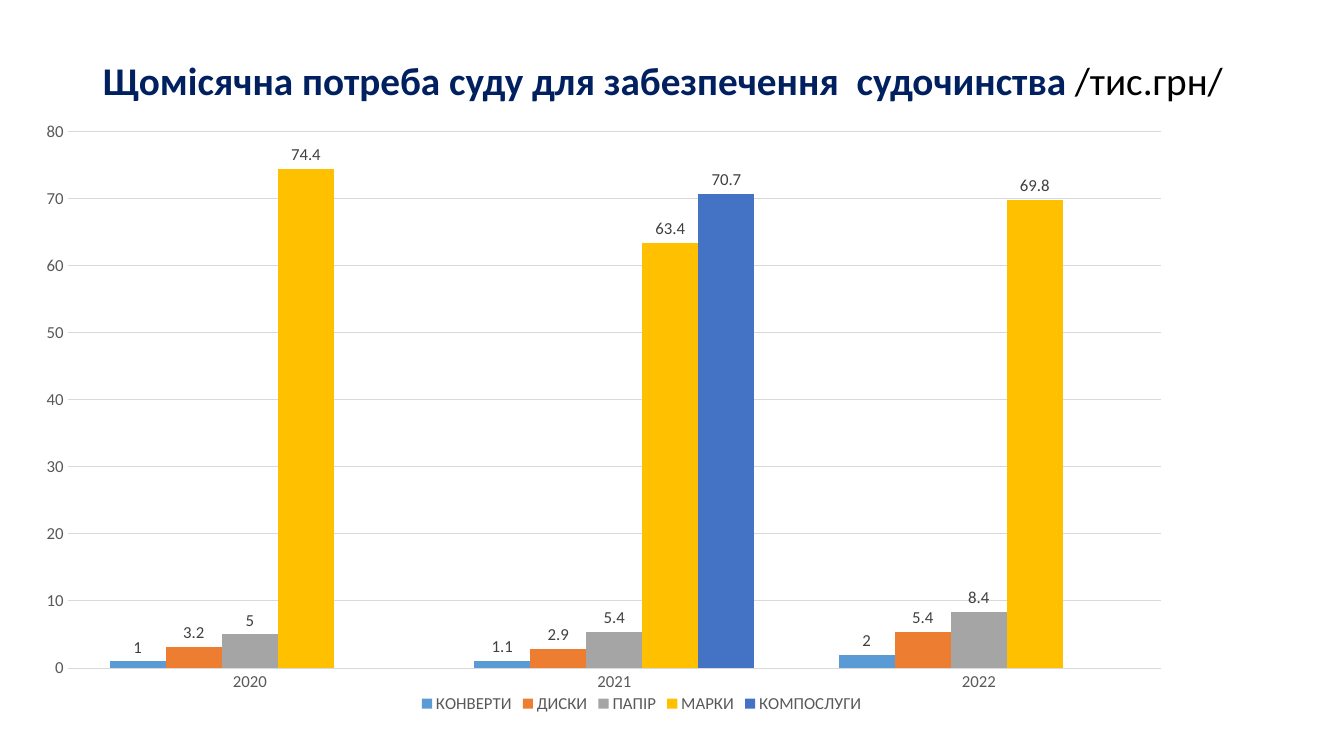
from lxml import etree
from pptx import Presentation
from pptx.chart.data import CategoryChartData as Data
from pptx.dml.color import RGBColor as RGB
from pptx.enum.chart import XL_CHART_TYPE as Kind, XL_LABEL_POSITION as Spot
from pptx.enum.chart import XL_LEGEND_POSITION as Side, XL_TICK_MARK as Tick
from pptx.enum.text import MSO_ANCHOR as Anchor, PP_ALIGN as Align
from pptx.oxml.ns import qn
from pptx.util import Inches, Pt

FONT = "Calibri"
COLORS = {
    "navy": "002060", "black": "000000", "axis": "595959",
    "label": "404040", "grid": "D9D9D9",
}
YEARS = ["2020", "2021", "2022"]
NEEDS = [
    ("КОНВЕРТИ", "5B9BD5", (1, 1.1, 2)),
    ("ДИСКИ", "ED7D31", (3.2, 2.9, 5.4)),
    ("ПАПІР", "A5A5A5", (5, 5.4, 8.4)),
    ("МАРКИ", "FFC000", (74.4, 63.4, 69.8)),
    ("КОМПОСЛУГИ", "4472C4", (None, 70.7, None)),
]
TITLE = [
    ("Щомісячна потреба суду для забезпечення  судочинства ", "navy", True),
    ("/тис.грн/", "black", False),
]


def put(item, **values):
    for name, value in values.items():
        setattr(item, name, value)


def style(font, size, color, bold=False):
    put(font, name=FONT, size=Pt(size), bold=bold)
    font.color.rgb = RGB.from_string(COLORS[color])


def add_title(slide):
    title = slide.shapes.title
    put(title, left=Inches(0.92), top=Inches(0.4),
        width=Inches(11.5), height=Inches(0.84))
    put(title.text_frame, vertical_anchor=Anchor.MIDDLE, word_wrap=True)
    para = title.text_frame.paragraphs[0]
    put(para, alignment=Align.LEFT, line_spacing=0.9)
    for text, color, bold in TITLE:
        run = para.add_run()
        run.text = text
        style(run.font, 28, color, bold)


def set_plot(chart, **box):
    """Fix the inner plot area as shares of the chart."""
    area = chart._chartSpace.chart.plotArea
    for old in area.findall(qn("c:layout")):
        area.remove(old)
    layout = etree.Element(qn("c:layout"))
    area.insert(0, layout)
    manual = etree.SubElement(layout, qn("c:manualLayout"))
    rules = {"layoutTarget": "inner", "xMode": "edge", "yMode": "edge", **box}
    for tag, value in rules.items():
        etree.SubElement(manual, qn("c:" + tag)).set("val", str(value))


def set_axis(axis):
    put(axis, major_tick_mark=Tick.NONE, minor_tick_mark=Tick.NONE)
    style(axis.tick_labels.font, 12, "axis")
    axis.format.line.fill.background()


def set_bars(series, color):
    put(series, invert_if_negative=False)
    series.format.fill.solid()
    series.format.fill.fore_color.rgb = RGB.from_string(color)
    labels = series.data_labels
    put(labels, show_value=True, position=Spot.OUTSIDE_END)
    style(labels.font, 12, "label")


def add_chart(slide):
    data = Data()
    data.categories = YEARS
    for name, _, values in NEEDS:
        data.add_series(name, values)
    box = [Inches(n) for n in (0.32, 1.13, 12.09, 5.99)]
    chart = slide.shapes.add_chart(Kind.COLUMN_CLUSTERED, *box, data).chart
    put(chart, has_title=False, has_legend=True)
    style(chart.font, 10, "black")
    set_plot(chart, x=0.029, y=0.029, w=0.897, h=0.889)

    # Axes and grid
    set_axis(chart.category_axis)
    scale = chart.value_axis
    set_axis(scale)
    put(scale, minimum_scale=0, maximum_scale=80, major_unit=10,
        has_major_gridlines=True)
    grid = scale.major_gridlines.format.line
    grid.width = Pt(0.75)
    grid.color.rgb = RGB.from_string(COLORS["grid"])

    # Bars and legend
    plot = chart.plots[0]
    put(plot, gap_width=150, overlap=0, vary_by_categories=False)
    for series, (_, color, _) in zip(plot.series, NEEDS):
        set_bars(series, color)
    put(chart.legend, position=Side.BOTTOM, include_in_layout=False)
    style(chart.legend.font, 12, "axis")


def main():
    deck = Presentation()
    put(deck, slide_width=Inches(13.33), slide_height=Inches(7.5))
    slide = deck.slides.add_slide(deck.slide_layouts[5])
    add_title(slide)
    add_chart(slide)
    deck.save("out.pptx")


if __name__ == "__main__":
    main()
